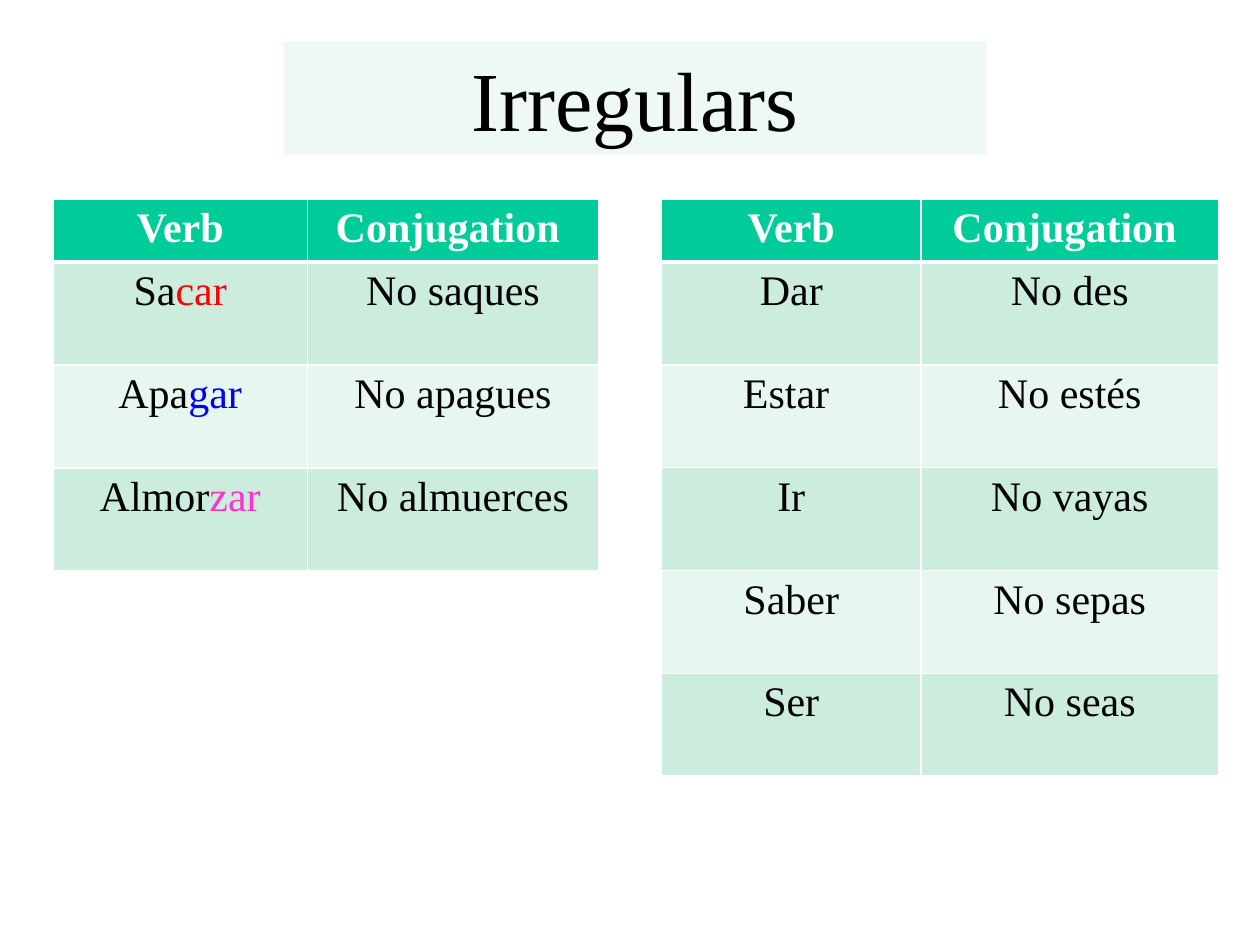
from dataclasses import dataclass

from lxml.etree import SubElement
from pptx import Presentation
from pptx.dml.color import RGBColor
from pptx.enum.text import MSO_ANCHOR, MSO_AUTO_SIZE, PP_ALIGN
from pptx.oxml.ns import qn
from pptx.util import Inches, Pt


@dataclass(frozen=True)
class Theme:
    """Colours and type sizes of the slide."""
    font: str = "Times New Roman"
    title_size: int = 48
    cell_size: int = 24
    text: str = "000000"
    white: str = "FFFFFF"
    title_fill: str = "EEF9F4"
    header: str = "00CC99"
    bands: tuple = ("CCECDE", "E7F6EF")
    car: str = "FF0000"
    gar: str = "0000FF"
    zar: str = "FF33CC"
    rule: int = 1
    header_rule: int = 3


THEME = Theme()
HEADER_HEIGHT = 0.5
HEADINGS = ("Verb", "Conjugation ")
SPELLING_VERBS = [
    ([("Sa", THEME.text), ("car", THEME.car)], "No saques"),
    ([("Apa", THEME.text), ("gar", THEME.gar)], "No apagues"),
    ([("Almor", THEME.text), ("zar", THEME.zar)], "No almuerces"),
]
IRREGULAR_VERBS = [
    ("Dar", "No des"),
    ("Estar ", "No estés"),
    ("Ir", "No vayas"),
    ("Saber", "No sepas"),
    ("Ser", "No seas"),
]


def add_run(p, text, size, color, bold=False):
    """Append a formatted run to a paragraph."""
    r = p.add_run()
    r.text = text
    formats = {"name": THEME.font, "size": Pt(size), "bold": bold}
    for name, value in formats.items():
        setattr(r.font, name, value)
    r.font.color.rgb = RGBColor.from_string(color)


def set_borders(cell, top, bottom):
    """Draw the white rules around a cell."""
    widths = {"a:lnL": THEME.rule, "a:lnR": THEME.rule, "a:lnT": top, "a:lnB": bottom}
    tc_pr = cell._tc.get_or_add_tcPr()
    for tag, width in widths.items():
        ln = SubElement(tc_pr, qn(tag), w=str(Pt(width)))
        fill = SubElement(ln, qn("a:solidFill"))
        SubElement(fill, qn("a:srgbClr"), val=THEME.white)


def fill_cell(cell, content, row):
    """Write one table cell in the style of its row."""
    is_header = row == 0
    set_borders(
        cell,
        THEME.header_rule if row == 1 else THEME.rule,
        THEME.header_rule if is_header else THEME.rule,
    )
    cell.fill.solid()
    band = THEME.header if is_header else THEME.bands[(row - 1) % 2]
    cell.fill.fore_color.rgb = RGBColor.from_string(band)
    color = THEME.white if is_header else THEME.text
    parts = [(content, color)] if isinstance(content, str) else content
    p = cell.text_frame.paragraphs[0]
    p.alignment = PP_ALIGN.CENTER
    for text, part_color in parts:
        add_run(p, text, THEME.cell_size, part_color, is_header)


def add_title(slide, text, box):
    """Place the title placeholder on its tinted box."""
    sp = slide.shapes.title
    sp.left, sp.top, sp.width, sp.height = map(Inches, box)
    sp.fill.solid()
    sp.fill.fore_color.rgb = RGBColor.from_string(THEME.title_fill)
    tf = sp.text_frame
    formats = {
        "word_wrap": True,
        "auto_size": MSO_AUTO_SIZE.SHAPE_TO_FIT_TEXT,
        "vertical_anchor": MSO_ANCHOR.TOP,
    }
    for name, value in formats.items():
        setattr(tf, name, value)
    p = tf.paragraphs[0]
    p.alignment = PP_ALIGN.CENTER
    add_run(p, text, THEME.title_size, THEME.text)


def add_verb_table(slide, verbs, box, verb_width):
    """Place a verb table, with equal body rows below its header."""
    rows = [HEADINGS, *verbs]
    left, top, width, height = box
    table = slide.shapes.add_table(len(rows), len(HEADINGS), *map(Inches, box)).table
    for column, column_width in zip(table.columns, (verb_width, width - verb_width)):
        column.width = Inches(column_width)
    body_height = (height - HEADER_HEIGHT) / len(verbs)
    for i, row in enumerate(rows):
        table.rows[i].height = Inches(body_height if i else HEADER_HEIGHT)
        for j, content in enumerate(row):
            fill_cell(table.cell(i, j), content, i)


def main():
    """Build the slide and save it."""
    prs = Presentation()
    prs.slide_width, prs.slide_height = Inches(10), Inches(7.5)
    slide = prs.slides.add_slide(prs.slide_layouts[5])
    add_title(slide, "Irregulars", (2.25, 0.33, 5.58, 0.9))
    add_verb_table(slide, SPELLING_VERBS, (0.42, 1.58, 4.33, 2.95), 2.02)
    add_verb_table(slide, IRREGULAR_VERBS, (5.25, 1.58, 4.42, 4.58), 2.06)
    prs.save("out.pptx")


if __name__ == "__main__":
    main()
